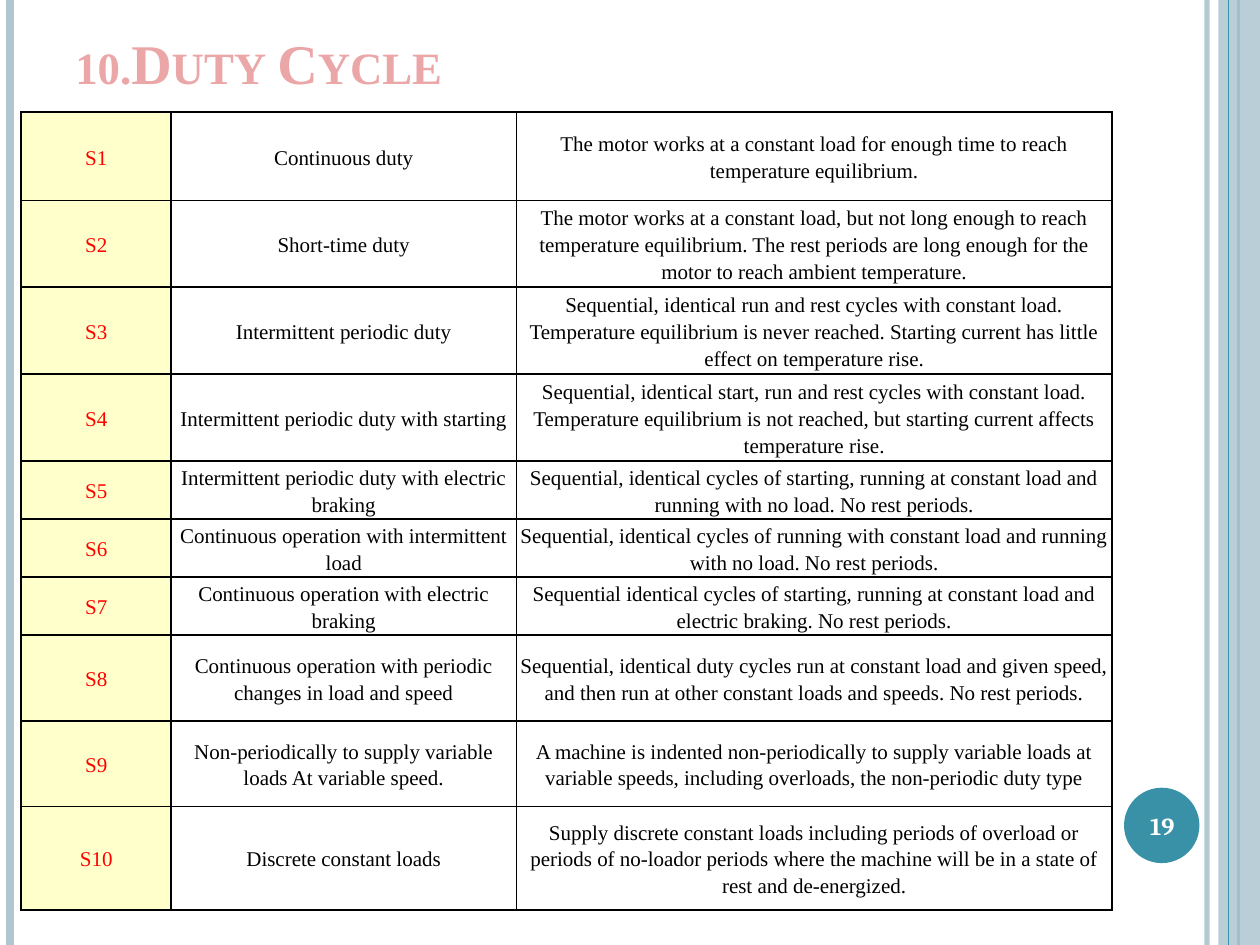
from lxml.etree import SubElement
from pptx import Presentation
from pptx.dml.color import RGBColor
from pptx.enum.shapes import MSO_CONNECTOR, MSO_SHAPE
from pptx.enum.text import MSO_ANCHOR, PP_ALIGN
from pptx.oxml.ns import qn
from pptx.util import Cm, Pt

SLIDE_WIDTH, SLIDE_HEIGHT = 25.4, 19.05
PALE_BLUE = RGBColor(0xAF, 0xC7, 0xD0)
TEAL = RGBColor(0x38, 0x91, 0xA7)
PINK = RGBColor(0xEB, 0xA7, 0xA8)
CREAM = RGBColor(0xFF, 0xFF, 0xCC)
RED = RGBColor(0xFF, 0x00, 0x00)
BLACK = RGBColor(0x00, 0x00, 0x00)
WHITE = RGBColor(0xFF, 0xFF, 0xFF)

COLUMN_WIDTHS = [3.02, 6.96, 12.01]
# Row height, duty name, description
DUTIES = [
    (1.78, "Continuous duty",
     "The motor works at a constant load for enough time to reach temperature equilibrium."),
    (1.75, "Short-time duty",
     "The motor works at a constant load, but not long enough to reach temperature equilibrium. "
     "The rest periods are long enough for the motor to reach ambient temperature."),
    (1.75, "Intermittent periodic duty",
     "Sequential, identical run and rest cycles with constant load. Temperature equilibrium is "
     "never reached. Starting current has little effect on temperature rise."),
    (1.75, "Intermittent periodic duty with starting",
     "Sequential, identical start, run and rest cycles with constant load. Temperature "
     "equilibrium is not reached, but starting current affects temperature rise."),
    (1.17, "Intermittent periodic duty with electric braking",
     "Sequential, identical cycles of starting, running at constant load and running with no "
     "load. No rest periods."),
    (1.17, "Continuous operation with intermittent load",
     "Sequential, identical cycles of running with constant load and running with no load. "
     "No rest periods."),
    (1.17, "Continuous operation with electric braking",
     "Sequential identical cycles of starting, running at constant load and electric braking. "
     "No rest periods."),
    (1.73, "Continuous operation with periodic changes in load and speed",
     "Sequential, identical duty cycles run at constant load and given speed, and then run at "
     "other constant loads and speeds. No rest periods."),
    (1.73, "Non-periodically to supply variable loads At variable speed.",
     "A machine is indented non-periodically to supply variable loads at variable speeds, "
     "including overloads, the non-periodic duty type"),
    (2.08, "Discrete constant loads",
     "Supply discrete constant loads including periods of overload or periods of no-loador "
     "periods where the machine will be in a state of rest and de-energized."),
]
FIRST_UNSPACED_ROW = 8


class SlideBuilder:
    body_font = "Times New Roman"
    number_font = "Cambria"
    inner_border, outer_border = 1, 1.5

    def __init__(self, slide):
        self.slide = slide

    def set_opacity(self, element, percent):
        """Make the solid colour inside the element partly transparent."""
        color = next(element.iter(qn("a:srgbClr")))
        SubElement(color, qn("a:alpha"), val=str(percent * 1000))

    def vertical_line(self, x, color, width, opacity=100):
        line = self.slide.shapes.add_connector(
            MSO_CONNECTOR.STRAIGHT, Cm(x), Cm(0), Cm(x), Cm(SLIDE_HEIGHT))
        line.line.color.rgb = color
        line.line.width = Pt(width)
        if opacity < 100:
            self.set_opacity(line._element.spPr, opacity)
        SubElement(line._element.spPr, qn("a:effectLst"))

    def filled_shape(self, kind, left, top, width, height, color, opacity=100):
        shape = self.slide.shapes.add_shape(kind, Cm(left), Cm(top), Cm(width), Cm(height))
        shape.shadow.inherit = False
        shape.fill.solid()
        shape.fill.fore_color.rgb = color
        shape.line.fill.background()
        if opacity < 100:
            self.set_opacity(shape._element.spPr, opacity)

    def style_paragraph(self, paragraph, size, color, font, bold=False, alignment=PP_ALIGN.LEFT):
        paragraph.alignment = alignment
        paragraph.font.name = font
        paragraph.font.size = Pt(size)
        paragraph.font.bold = bold
        paragraph.font.color.rgb = color

    def text(self, text, left, top, width, height, size, color, font,
             alignment=PP_ALIGN.LEFT, small_caps=False):
        box = self.slide.shapes.add_textbox(Cm(left), Cm(top), Cm(width), Cm(height))
        frame = box.text_frame
        frame.word_wrap = True
        frame.vertical_anchor = MSO_ANCHOR.MIDDLE
        paragraph = frame.paragraphs[0]
        run = paragraph.add_run()
        run.text = text
        self.style_paragraph(paragraph, size, color, font, True, alignment)
        if small_caps:
            run._r.get_or_add_rPr().set("cap", "small")

    def border(self, cell, side, width):
        line = SubElement(cell._tc.get_or_add_tcPr(), qn(f"a:ln{side}"), w=str(Pt(width)))
        fill = SubElement(line, qn("a:solidFill"))
        SubElement(fill, qn("a:srgbClr"), val=str(BLACK))

    def cell(self, cell, text, color, fill, outer_sides, spaced):
        cell.margin_left = cell.margin_right = cell.margin_top = cell.margin_bottom = Cm(0.03)
        cell.vertical_anchor = MSO_ANCHOR.MIDDLE
        cell.text = text
        paragraph = cell.text_frame.paragraphs[0]
        self.style_paragraph(paragraph, 12, color, self.body_font, alignment=PP_ALIGN.CENTER)
        paragraph.line_spacing = 1.15
        if spaced:
            paragraph.space_before = Pt(11.2)
            paragraph.space_after = Pt(7.5)
        for side in "LRTB":
            self.border(cell, side, self.outer_border if side in outer_sides else self.inner_border)
        if fill is None:
            cell.fill.background()
        else:
            cell.fill.solid()
            cell.fill.fore_color.rgb = fill

    def duty_table(self, left, top):
        heights = [height for height, _, _ in DUTIES]
        table = self.slide.shapes.add_table(
            len(DUTIES), len(COLUMN_WIDTHS), Cm(left), Cm(top),
            Cm(sum(COLUMN_WIDTHS)), Cm(sum(heights))).table
        table.first_row = table.horz_banding = False
        for column, width in zip(table.columns, COLUMN_WIDTHS):
            column.width = Cm(width)
        last_row, last_column = len(DUTIES) - 1, len(COLUMN_WIDTHS) - 1
        for row, (height, name, description) in enumerate(DUTIES):
            table.rows[row].height = Cm(height)
            for column, text in enumerate((f"S{row + 1}", name, description)):
                is_label = column == 0
                edges = {"L": is_label, "R": column == last_column,
                         "T": row == 0, "B": row == last_row}
                self.cell(table.cell(row, column), text,
                          RED if is_label else BLACK, CREAM if is_label else None,
                          [side for side, outer in edges.items() if outer],
                          is_label or row < FIRST_UNSPACED_ROW)


def main():
    presentation = Presentation()
    presentation.slide_width = Cm(SLIDE_WIDTH)
    presentation.slide_height = Cm(SLIDE_HEIGHT)
    builder = SlideBuilder(presentation.slides.add_slide(presentation.slide_layouts[6]))

    builder.vertical_line(24.33, PALE_BLUE, 3, opacity=93)
    builder.vertical_line(0.2, PALE_BLUE, 4.5)
    builder.vertical_line(24.97, TEAL, 1.5)
    builder.filled_shape(MSO_SHAPE.RECTANGLE, 24.56, 0, 0.84, SLIDE_HEIGHT, PALE_BLUE, opacity=87)
    builder.vertical_line(24.77, TEAL, 0.75)
    builder.filled_shape(MSO_SHAPE.OVAL, 22.66, 15.88, 1.52, 1.52, TEAL)

    builder.duty_table(0.43, 2.26)
    builder.text("10.Duty Cycle", 1.27, 0.43, 13.13, 1.63, 32, PINK,
                 builder.body_font, small_caps=True)
    builder.text("19", 22.58, 15.93, 1.7, 1.45, 14, WHITE,
                 builder.number_font, alignment=PP_ALIGN.CENTER)
    presentation.save("out.pptx")


if __name__ == "__main__":
    main()
